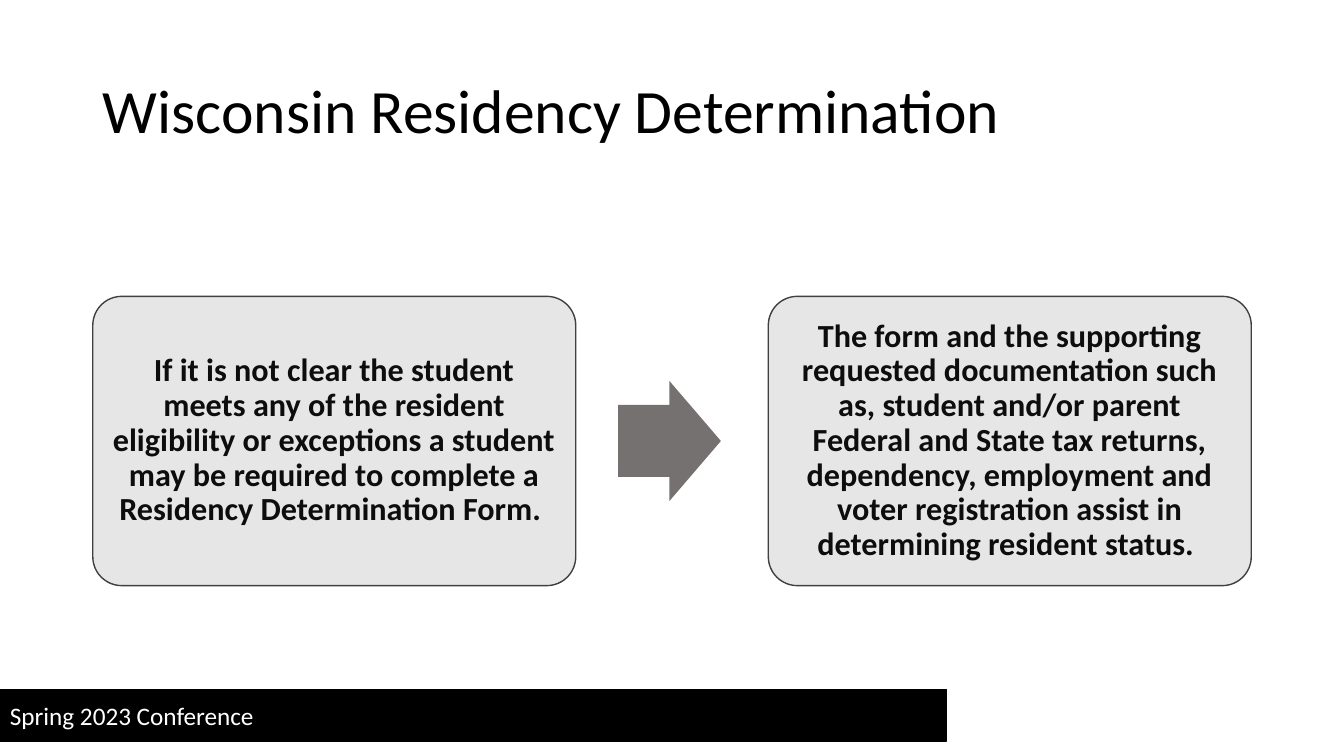
from pptx import Presentation
from pptx.dml.color import RGBColor
from pptx.enum.shapes import MSO_SHAPE as Shape
from pptx.enum.text import MSO_ANCHOR as Anchor, PP_ALIGN as Align
from pptx.util import Inches, Pt

TITLE = "Wisconsin Residency Determination"
FOOTER = "Spring 2023 Conference"
STEPS = [
    "If it is not clear the student meets any of the resident eligibility or "
    "exceptions a student may be required to complete a Residency Determination Form. ",
    "The form and the supporting requested documentation such as, student and/or parent "
    "Federal and State tax returns, dependency, employment and voter registration "
    "assist in determining resident status. ",
]

LEFT, STEP_TOP = 0.92, 2.94
STEP_WIDTH, STEP_HEIGHT = 4.79, 2.87
STEP_PITCH = 6.7
ARROW_LEFT, ARROW_WIDTH, ARROW_HEIGHT = 6.13, 1.02, 1.19


def color(value):
    return RGBColor.from_string(value)


def write(shape, text, size, ink, bold=False, align=Align.LEFT, spacing=1.0, inset=0.05):
    frame = shape.text_frame
    frame.word_wrap = True
    frame.vertical_anchor = Anchor.MIDDLE
    frame.margin_left = frame.margin_right = Inches(0.1)
    frame.margin_top = frame.margin_bottom = Inches(inset)
    para = frame.paragraphs[0]
    para.alignment = align
    para.line_spacing = spacing
    span = para.add_run()
    span.text = text
    span.font.name = "Calibri"
    span.font.size = Pt(size)
    span.font.bold = bold
    span.font.color.rgb = color(ink)


def add_block(page, kind, left, top, width, height, fill, line=None):
    block = page.shapes.add_shape(
        kind, Inches(left), Inches(top), Inches(width), Inches(height))
    block.shadow.inherit = False
    block.fill.solid()
    block.fill.fore_color.rgb = color(fill)
    if line:
        block.line.color.rgb = color(line)
        block.line.width = Pt(1)
    else:
        block.line.fill.background()
    return block


def main():
    deck = Presentation()
    deck.slide_width, deck.slide_height = Inches(13.33), Inches(7.5)
    page = deck.slides.add_slide(deck.slide_layouts[5])

    title = page.shapes.title
    title.left, title.top = Inches(LEFT), Inches(0.4)
    title.width, title.height = Inches(11.5), Inches(1.45)
    write(title, TITLE, 44, "000000", spacing=0.9)

    footer = add_block(page, Shape.RECTANGLE, 0, 6.84, 9.39, 0.51, "000000", "000000")
    write(footer, FOOTER, 18, "FFFFFF")

    for index, text in enumerate(STEPS):
        step = add_block(page, Shape.ROUNDED_RECTANGLE, LEFT + index * STEP_PITCH,
                         STEP_TOP, STEP_WIDTH, STEP_HEIGHT, "E7E6E6", "404040")
        step.adjustments[0] = 0.1
        write(step, text, 23, "0D0D0D", bold=True, align=Align.CENTER,
              spacing=0.9, inset=0.1)

    arrow_top = STEP_TOP + (STEP_HEIGHT - ARROW_HEIGHT) / 2
    arrow = add_block(page, Shape.RIGHT_ARROW, ARROW_LEFT, arrow_top,
                      ARROW_WIDTH, ARROW_HEIGHT, "767171")
    arrow.adjustments[0] = 0.6
    arrow.adjustments[1] = 0.5

    deck.save("out.pptx")


if __name__ == "__main__":
    main()
